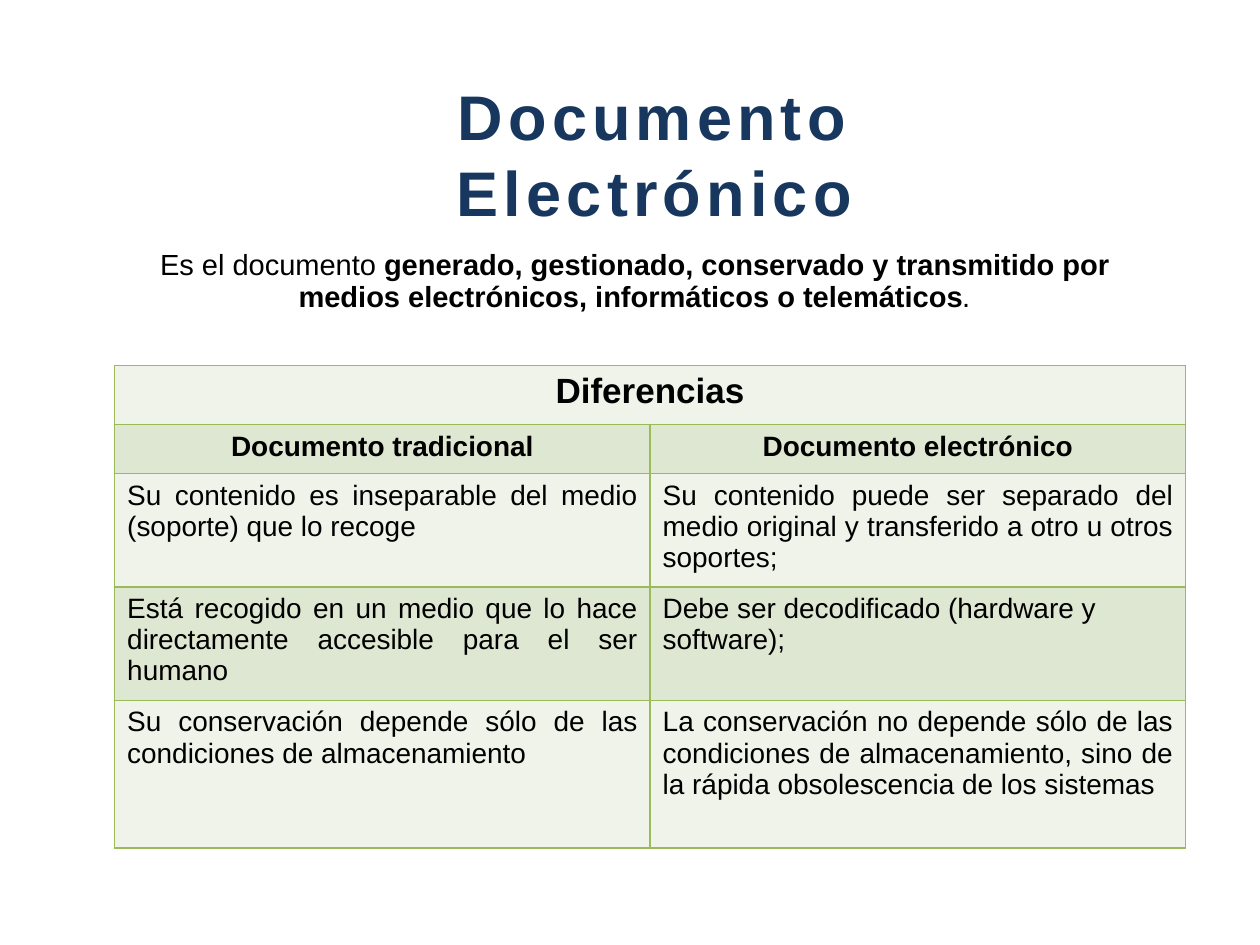
from lxml import etree
from pptx import Presentation
from pptx.dml.color import RGBColor
from pptx.enum.text import MSO_ANCHOR, PP_ALIGN
from pptx.oxml.ns import qn
from pptx.util import Inches, Pt

LEFT, CENTER, JUSTIFY = PP_ALIGN.LEFT, PP_ALIGN.CENTER, PP_ALIGN.JUSTIFY
TOP, MIDDLE = MSO_ANCHOR.TOP, MSO_ANCHOR.MIDDLE
COLORS = {"title": "17375E", "text": "000000", "border": "9BBB59",
          "light": "EFF3EA", "dark": "DEE7D1"}


class SlideBuilder:
    """Holds the style and the current slide."""

    font = "Arial"

    def __init__(self, slide):
        self.slide = slide

    def format(self, p, size, color="text", bold=None, align=LEFT):
        p.alignment = align
        p.font.name, p.font.size, p.font.bold = self.font, Pt(size), bold
        p.font.color.rgb = RGBColor.from_string(COLORS[color])

    def place(self, sp, box, anchor):
        sp.left, sp.top, sp.width, sp.height = (Inches(v) for v in box)
        sp.text_frame.word_wrap = True
        sp.text_frame.vertical_anchor = anchor
        return sp.text_frame.paragraphs[0]

    def title(self, text, box, size, spacing):
        p = self.place(self.slide.shapes.title, box, MIDDLE)
        r = p.add_run()
        r.text = text
        r.font._element.set("spc", str(spacing * 100))
        self.format(p, size, "title", True, CENTER)

    def body(self, runs, box, size):
        p = self.place(self.slide.placeholders[1], box, TOP)
        for text, bold in runs:
            r = p.add_run()
            r.text, r.font.bold = text, bold
        p.line_spacing, p.space_before = 0.9, Pt(0)
        self.format(p, size, align=CENTER)

    def borders(self, cell):
        tc_pr = cell._tc.get_or_add_tcPr()
        for side in ("a:lnL", "a:lnR", "a:lnT", "a:lnB"):
            ln = etree.SubElement(tc_pr, qn(side), w=str(Pt(1)))
            fill = etree.SubElement(ln, qn("a:solidFill"))
            etree.SubElement(fill, qn("a:srgbClr"), val=COLORS["border"])

    def table(self, rows, left, top, col_width, heights):
        n_cols = len(rows[-1])
        table = self.slide.shapes.add_table(
            len(rows), n_cols, Inches(left), Inches(top),
            Inches(col_width * n_cols), Inches(sum(heights))).table
        for col in table.columns:
            col.width = Inches(col_width)
        for i, (texts, height) in enumerate(zip(rows, heights)):
            table.rows[i].height = Inches(height)
            for cell in table.rows[i].cells:
                self.borders(cell)
                cell.fill.solid()
                cell.fill.fore_color.rgb = RGBColor.from_string(
                    COLORS["dark" if i % 2 else "light"])
            if len(texts) < n_cols:
                table.cell(i, 0).merge(table.cell(i, n_cols - 1))
            for j, (text, align) in enumerate(texts):
                cell = table.cell(i, j)
                cell.text = text
                self.format(cell.text_frame.paragraphs[0],
                            20 if i == 0 else 16, bold=i < 2, align=align)


def main():
    prs = Presentation()
    prs.slide_width, prs.slide_height = Inches(10), Inches(7.5)
    s = SlideBuilder(prs.slides.add_slide(prs.slide_layouts[0]))

    # Title and definition
    s.title("Documento Electrónico", (2.24, 0.76, 5.91, 0.91), 36, 3)
    s.body([("Es el documento ", False),
            ("generado, gestionado, conservado y transmitido por medios "
             "electrónicos, informáticos o telemáticos", True),
            (".", False)], (0.98, 1.94, 8.11, 0.63), 16.6)

    # Comparison table
    rows = [
        [("Diferencias", CENTER)],
        [("Documento tradicional", CENTER), ("Documento electrónico", CENTER)],
        [("Su contenido es inseparable del medio (soporte) que lo recoge", JUSTIFY),
         ("Su contenido puede ser separado del medio original y transferido "
          "a otro u otros soportes;", JUSTIFY)],
        [("Está recogido en un medio que lo hace directamente accesible "
          "para el ser humano", JUSTIFY),
         ("Debe ser decodificado (hardware y software);", LEFT)],
        [("Su conservación depende sólo de las condiciones de almacenamiento", JUSTIFY),
         ("La conservación no depende sólo de las condiciones de "
          "almacenamiento, sino de la rápida obsolescencia de los sistemas", JUSTIFY)],
    ]
    s.table(rows, 0.91, 2.9, 4.25, [0.47, 0.39, 0.9, 0.9, 1.17])

    prs.save("out.pptx")


if __name__ == "__main__":
    main()
